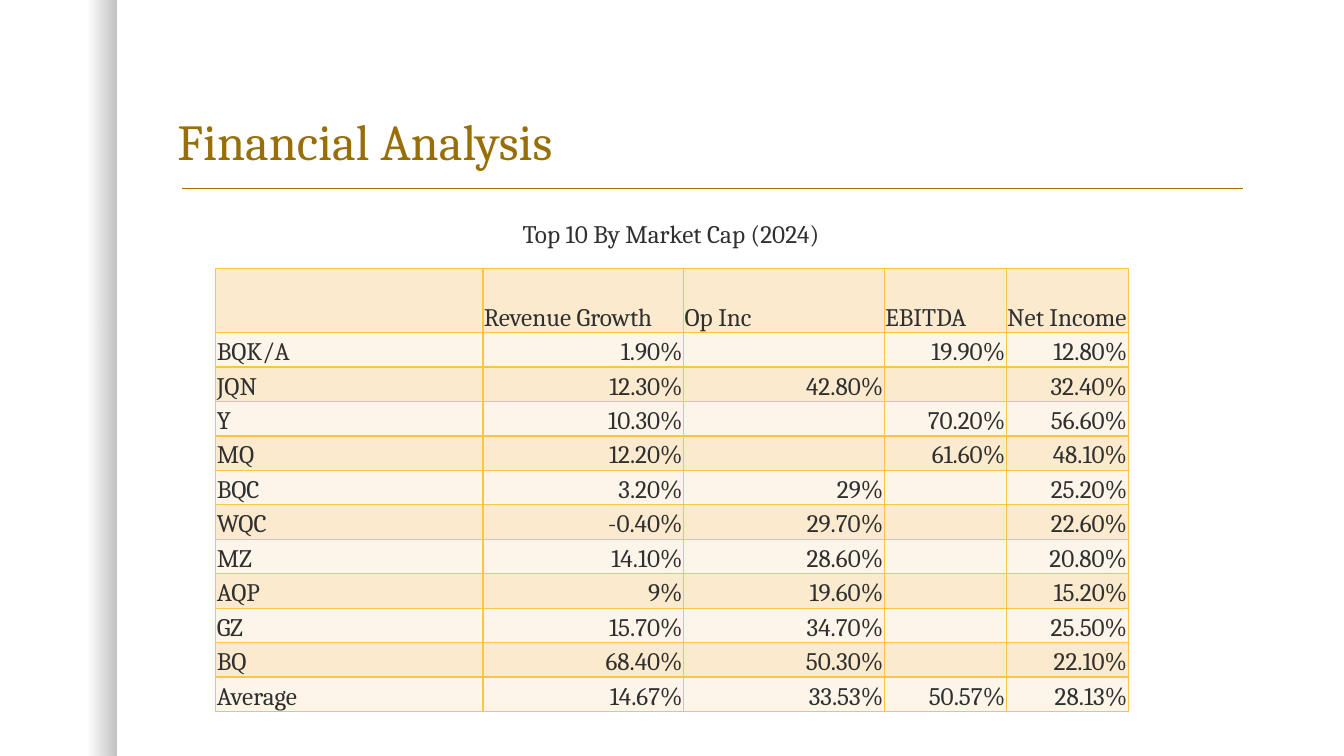
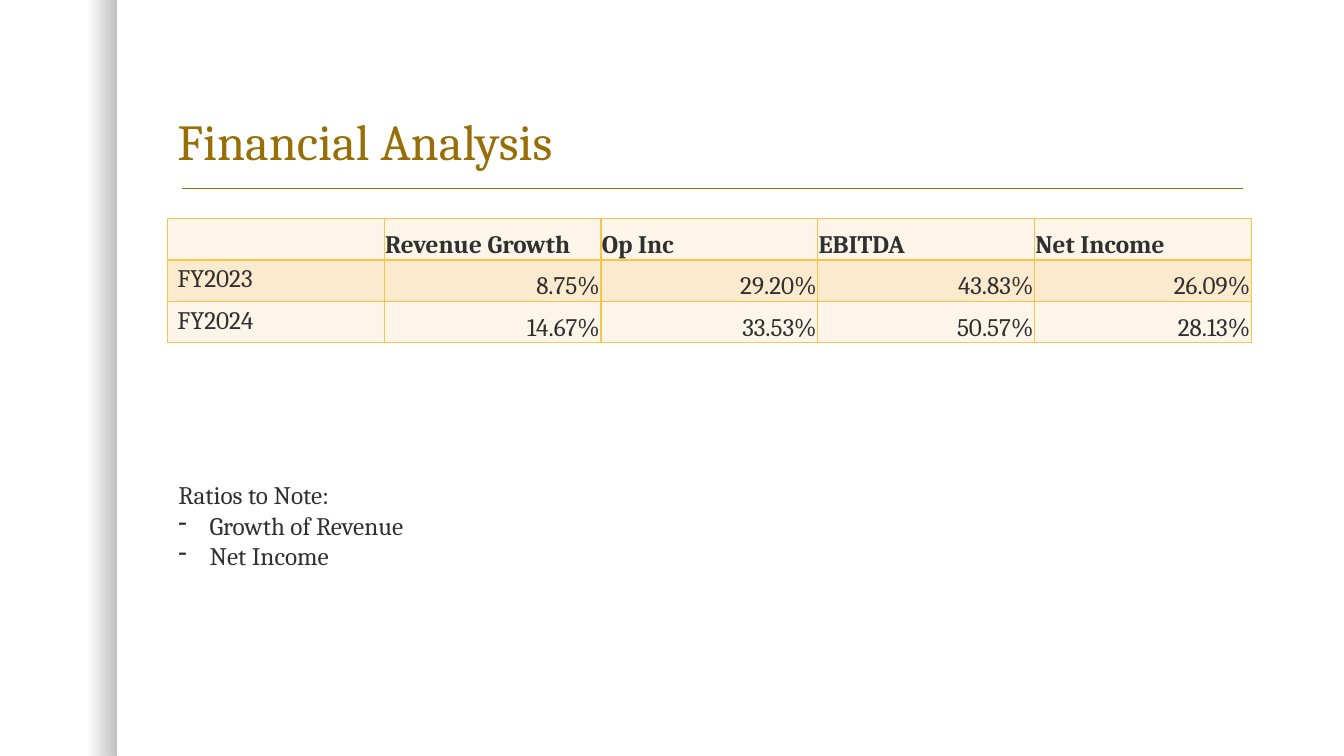
import pptx
import pptx.util
import pptx.dml.color
import pptx.enum.shapes
import pptx.enum.text
import pptx.oxml
import pptx.oxml.ns

Inch = pptx.util.Inches
Color = pptx.dml.color.RGBColor
Align = pptx.enum.text.PP_ALIGN
Anchor = pptx.enum.text.MSO_ANCHOR
qn = pptx.oxml.ns.qn

GOLD = Color(0x98, 0x6F, 0x07)
EDGE = Color(0xF7, 0xC5, 0x47)
DARK = Color(0xFC, 0xEA, 0xCF)
PALE = Color(0xFD, 0xF5, 0xE9)
INK = Color(0x30, 0x30, 0x30)
BLACK = Color(0, 0, 0)
FONT = "Cambria"
WIDE, HIGH = 13.33, 7.5
LEFT, SPAN = 1.66, 10.75

TITLE = "Financial Analysis"
HEAD = ["", "Revenue Growth", "Op Inc", "EBITDA", "Net Income"]
AVERAGE = ["14.67%", "33.53%", "50.57%", "28.13%"]
CAPTION = "Top 10 By Market Cap (2024)"
FIRMS = [
    HEAD,
    ["BQK/A", "1.90%", "", "19.90%", "12.80%"],
    ["JQN", "12.30%", "42.80%", "", "32.40%"],
    ["Y", "10.30%", "", "70.20%", "56.60%"],
    ["MQ", "12.20%", "", "61.60%", "48.10%"],
    ["BQC", "3.20%", "29%", "", "25.20%"],
    ["WQC", "-0.40%", "29.70%", "", "22.60%"],
    ["MZ", "14.10%", "28.60%", "", "20.80%"],
    ["AQP", "9%", "19.60%", "", "15.20%"],
    ["GZ", "15.70%", "34.70%", "", "25.50%"],
    ["BQ", "68.40%", "50.30%", "", "22.10%"],
    ["Average"] + AVERAGE,
]
YEARS = [
    HEAD,
    ["FY2023", "8.75%", "29.20%", "43.83%", "26.09%"],
    ["FY2024"] + AVERAGE,
]
NOTES = ["Ratios to Note:", "Growth of Revenue", "Net Income"]


def style(frame, size=18, color=INK, bold=False):
    for para in frame.paragraphs:
        for run in para.runs:
            run.font.name = FONT
            run.font.size = pptx.util.Pt(size)
            run.font.color.rgb = color
            run.font.bold = bold


def add_node(parent, tag, **attrs):
    node = parent.makeelement(qn(tag), attrs)
    parent.append(node)
    return node


def dress(layout, slide):
    band = slide.shapes.add_shape(
        pptx.enum.shapes.MSO_SHAPE.RECTANGLE, 0, 0, Inch(1.16), Inch(HIGH))
    band.shadow.inherit = False
    band.line.fill.background()
    band.fill.gradient()
    band.fill.gradient_angle = 0
    for stop, place in zip(band.fill.gradient_stops, (0.75, 1)):
        stop.color.rgb = BLACK
        stop.position = place
    for tint, alpha in zip(band.element.spPr.iter(qn("a:srgbClr")), ("0", "25000")):
        add_node(tint, "a:alpha", val=alpha)
    rule = slide.shapes.add_connector(
        pptx.enum.shapes.MSO_CONNECTOR.STRAIGHT,
        Inch(1.81), Inch(1.87), Inch(12.33), Inch(1.87))
    rule.line.color.rgb = GOLD
    rule.line.width = pptx.util.Pt(1)
    add_node(rule.element.spPr, "a:effectLst")
    for spot, shape in enumerate((band, rule), 2):
        layout.shapes.element.insert(spot, shape.element)
    title = layout.placeholders[0]
    title.left, title.top = Inch(LEFT), Inch(0.42)
    title.width, title.height = Inch(SPAN), Inch(1.33)
    title.text_frame.vertical_anchor = Anchor.BOTTOM


def set_title(slide):
    frame = slide.shapes.title.text_frame
    frame.text = TITLE
    frame.paragraphs[0].alignment = Align.LEFT
    frame.paragraphs[0].line_spacing = 0.9
    style(frame, 36, GOLD)


def add_edges(cell):
    props = cell._tc.get_or_add_tcPr()
    for spot, side in enumerate("LRTB"):
        line = props.makeelement(qn("a:ln" + side), {"w": "12700"})
        fill = add_node(line, "a:solidFill")
        add_node(fill, "a:srgbClr", val=str(EDGE))
        props.insert(spot, line)


def add_grid(slide, data, left, top, cols, rows, fills, bold=False, roomy=False):
    table = slide.shapes.add_table(
        len(rows), len(cols), Inch(left), Inch(top),
        Inch(sum(cols)), Inch(sum(rows))).table
    for col, width in zip(table.columns, cols):
        col.width = Inch(width)
    for r, (line, height) in enumerate(zip(data, rows)):
        table.rows[r].height = Inch(height)
        for c, text in enumerate(line):
            cell = table.cell(r, c)
            cell.text = text
            cell.fill.solid()
            cell.fill.fore_color.rgb = fills[r % 2]
            if not (roomy and r and c == 0):
                cell.vertical_anchor = Anchor.BOTTOM
                cell.margin_left = cell.margin_right = cell.margin_top = Inch(0.01)
                cell.margin_bottom = 0
            if r and c:
                cell.text_frame.paragraphs[0].alignment = Align.RIGHT
            style(cell.text_frame, bold=bold and r == 0)
            add_edges(cell)


def add_text(slide, lines, left, top, width, height):
    frame = slide.shapes.add_textbox(
        Inch(left), Inch(top), Inch(width), Inch(height)).text_frame
    frame.word_wrap = True
    frame.text = "\n".join(lines)
    for para in frame.paragraphs[1:]:
        props = para._p.get_or_add_pPr()
        props.set("marL", str(Inch(0.31)))
        props.set("indent", str(-Inch(0.31)))
        add_node(props, "a:buChar", char="-")
    style(frame)
    return frame


def main():
    deck = pptx.Presentation()
    deck.slide_width, deck.slide_height = Inch(WIDE), Inch(HIGH)
    layout = deck.slide_layouts[5]
    firms, years = [deck.slides.add_slide(layout) for _ in range(2)]
    dress(layout, firms)
    for slide in (firms, years):
        set_title(slide)

    body = len(FIRMS) - 1
    add_grid(firms, FIRMS, 2.14, 2.66, [2.65, 1.99, 1.99, 1.21, 1.21],
             [0.64] + [3.76 / body] * body, (DARK, PALE))
    frame = add_text(firms, [CAPTION], 4.42, 2.12, 4.47, 0.4)
    frame.paragraphs[0].alignment = Align.CENTER

    add_grid(years, YEARS, LEFT, 2.17, [SPAN / len(HEAD)] * len(HEAD),
             [0.41] * len(YEARS), (PALE, DARK), bold=True, roomy=True)
    add_text(years, NOTES, 1.67, 4.71, 7.38, 1.01)
    deck.save("out.pptx")


if __name__ == "__main__":
    main()
